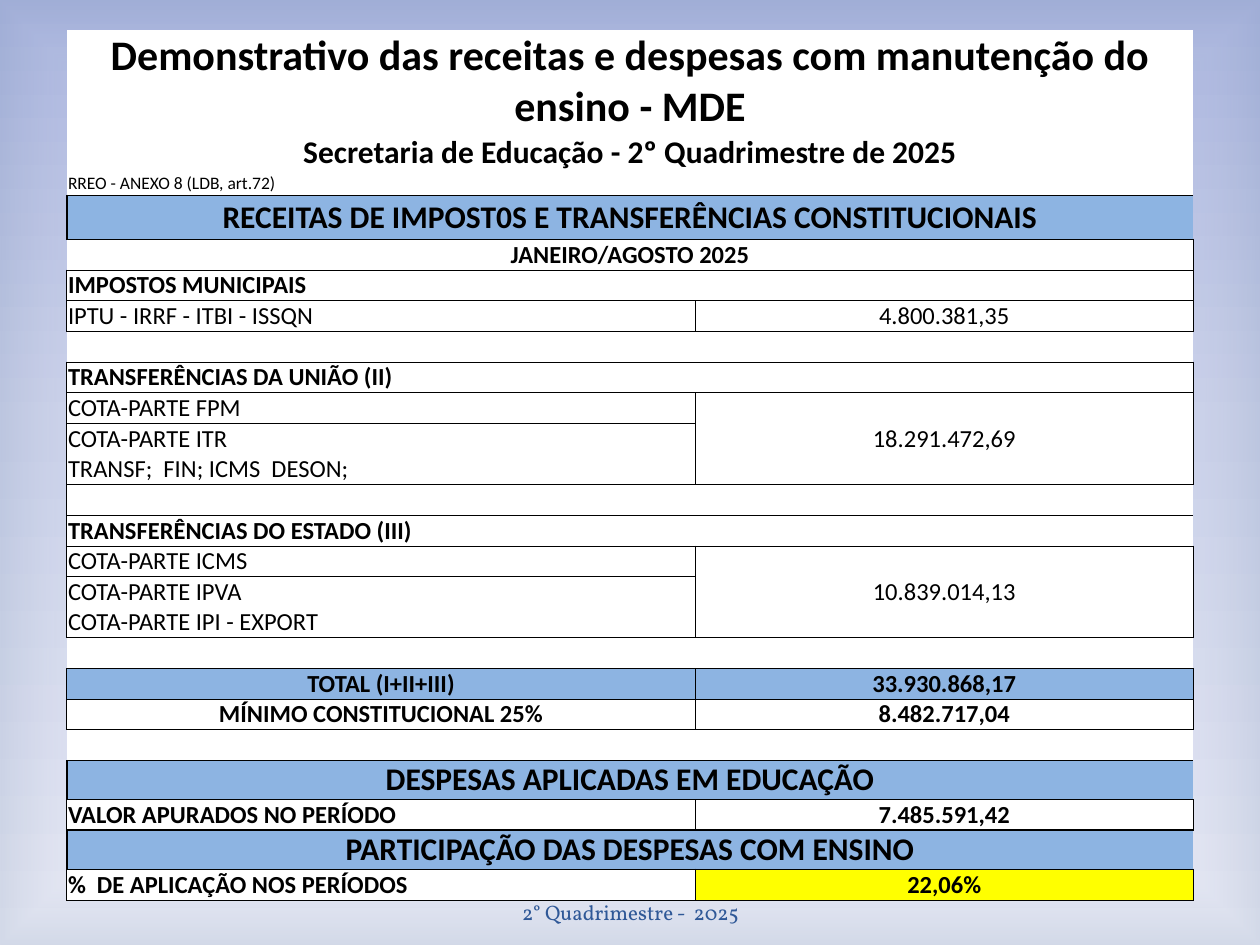
"""Build the slide on education revenue and spending."""
from lxml.etree import SubElement
from pptx import Presentation
from pptx.dml.color import RGBColor
from pptx.enum.shapes import MSO_SHAPE
from pptx.enum.text import MSO_ANCHOR, PP_ALIGN
from pptx.oxml.ns import qn
from pptx.util import Inches, Pt

HUES = {
    "black": "000000", "white": "FFFFFF", "blue": "8DB4E2", "gold": "FFFF00",
    "foot": "2F5897", "top": "A2AEDC", "mid": "C6CDE8", "low": "E3E6F3",
    "edge": "9BADC4",
}
LEFT, MID = PP_ALIGN.LEFT, PP_ALIGN.CENTER
STEP = 0.73 / 3


def shade(root, stops):
    """Give the first gradient under root new stops and return it."""
    grad = next(root.iter(qn("a:gradFill")))
    for part in list(grad):
        grad.remove(part)
    group = SubElement(grad, qn("a:gsLst"))
    for place, hue, alpha in stops:
        stop = SubElement(group, qn("a:gs"), pos=str(place * 1000))
        tint = SubElement(stop, qn("a:srgbClr"), val=HUES[hue])
        SubElement(tint, qn("a:alpha"), val=str(alpha * 1000))
    return grad


def write(frame, text, size, bold, align, face, hue):
    """Put one formatted paragraph into a text frame."""
    frame.text = text
    line = frame.paragraphs[0]
    line.alignment = align
    for run in line.runs:
        run.font.size, run.font.bold, run.font.name = Pt(size), bold, face
        run.font.color.rgb = RGBColor.from_string(HUES[hue])
    SubElement(line._p, qn("a:endParaRPr"), sz=str(size * 100))


deck = Presentation()
deck.slide_width, deck.slide_height = Inches(10), Inches(7.5)
slide = deck.slides.add_slide(deck.slide_layouts[6])

slide.background.fill.gradient()
grad = shade(slide._element, [(0, "top", 100), (45, "mid", 100), (100, "low", 100)])
SubElement(grad, qn("a:lin"), ang="5400000", scaled="0")

veil = slide.shapes.add_shape(MSO_SHAPE.RECTANGLE, 0, 0, Inches(10), Inches(7.5))
veil.shadow.inherit = False
veil.line.fill.background()
veil.fill.gradient()
grad = shade(veil._element, [(83, "white", 11), (100, "edge", 23)])
focus = SubElement(grad, qn("a:path"), path="rect")
SubElement(focus, qn("a:fillToRect"), l="50000", t="50000", r="50000", b="50000")

foot = slide.shapes.add_textbox(Inches(3.42), Inches(7.04), Inches(3.17), Inches(0.4))
foot.text_frame.word_wrap = True
foot.text_frame.vertical_anchor = MSO_ANCHOR.MIDDLE
write(foot.text_frame, "2° Quadrimestre -  2025", 12, False, MID, "Vollkorn", "foot")

# Each row: height, size, bold, align, fill, sides (capital = thick), left, right
ROWS = [
    (0.82, 24, True, MID, "white", "",
     "Demonstrativo das receitas e despesas com manutenção do ensino - MDE", None),
    (0.31, 18, True, MID, "white", "",
     "Secretaria de Educação - 2º Quadrimestre de 2025", None),
    (0.18, 10, False, LEFT, "white", "B", "RREO - ANEXO 8 (LDB, art.72)", ""),
    (0.35, 18, True, MID, "blue", "LTB",
     "RECEITAS DE IMPOST0S E TRANSFERÊNCIAS CONSTITUCIONAIS", None),
    (STEP, 14, True, MID, "white", "Trb", "JANEIRO/AGOSTO 2025", None),
    (STEP, 14, True, LEFT, "white", "ltrb", "IMPOSTOS MUNICIPAIS", None),
    (STEP, 14, False, LEFT, "white", "ltrb", "IPTU - IRRF - ITBI - ISSQN", "4.800.381,35"),
    (STEP, 14, False, LEFT, "white", "tb", "", None),
    (STEP, 14, True, LEFT, "white", "ltrb", "TRANSFERÊNCIAS DA UNIÃO (II)", None),
    (STEP, 14, False, LEFT, "white", "ltr", "COTA-PARTE FPM", "18.291.472,69"),
    (STEP, 14, False, LEFT, "white", "lr", "COTA-PARTE ITR", ""),
    (STEP, 14, False, LEFT, "white", "lrb", "TRANSF;  FIN; ICMS  DESON;", ""),
    (STEP, 14, False, LEFT, "white", "ltb", "", None),
    (STEP, 14, True, LEFT, "white", "ltb", "TRANSFERÊNCIAS DO ESTADO (III)", None),
    (STEP, 14, False, LEFT, "white", "ltr", "COTA-PARTE ICMS", "10.839.014,13"),
    (STEP, 14, False, LEFT, "white", "lr", "COTA-PARTE IPVA", ""),
    (STEP, 14, False, LEFT, "white", "lrb", "COTA-PARTE IPI - EXPORT", ""),
    (STEP, 14, False, LEFT, "white", "tb", "", ""),
    (STEP, 14, True, MID, "blue", "ltrb", "TOTAL (I+II+III)", "33.930.868,17"),
    (STEP, 14, True, MID, "white", "ltrb", "MÍNIMO CONSTITUCIONAL 25%", "8.482.717,04"),
    (STEP, 14, False, LEFT, "white", "tB", "", ""),
    (0.31, 18, True, MID, "blue", "LTb", "DESPESAS APLICADAS EM EDUCAÇÃO", None),
    (STEP, 14, True, LEFT, "white", "ltrB", "VALOR APURADOS NO PERÍODO", "7.485.591,42"),
    (0.31, 18, True, MID, "blue", "LTB", "PARTICIPAÇÃO DAS DESPESAS COM ENSINO", None),
    (STEP, 14, True, LEFT, "white", "lTrb", "%  DE APLICAÇÃO NOS PERÍODOS", "22,06%"),
]

frame = slide.shapes.add_table(len(ROWS), 2, Inches(0.53), Inches(0.24),
                               Inches(8.94), Inches(6.82))
table = frame.table
table.first_row = table.horz_banding = False
style = next(table._tbl.iter(qn("a:tableStyleId")))
style.text = "{2D5ABB26-0587-4C30-8999-92F81FD0307C}"
table.columns[0].width, table.columns[1].width = Inches(4.99), Inches(3.95)

for top in (9, 14):
    table.cell(top, 1).merge(table.cell(top + 2, 1))

for row, (high, size, bold, align, fill, sides, left, right) in enumerate(ROWS):
    table.rows[row].height = Inches(high)
    if right is None:
        table.cell(row, 0).merge(table.cell(row, 1))
    for col, text in enumerate((left, right or "")):
        cell = table.cell(row, col)
        cell.margin_left = cell.margin_right = Inches(0.01)
        cell.margin_top = cell.margin_bottom = 0
        cell.vertical_anchor = MSO_ANCHOR.MIDDLE
        write(cell.text_frame, text, size, bold, MID if col else align, "Calibri", "black")
        props = cell._tc.get_or_add_tcPr()
        for side in "lrtb":
            if side in sides.lower():
                wide = Pt(0.5 if side in sides else 1)
                edge = SubElement(props, qn(f"a:ln{side.upper()}"), w=str(wide))
                ink = SubElement(edge, qn("a:solidFill"))
                SubElement(ink, qn("a:srgbClr"), val=HUES["black"])
        cell.fill.solid()
        tone = "gold" if text == "22,06%" else fill
        cell.fill.fore_color.rgb = RGBColor.from_string(HUES[tone])

deck.save("out.pptx")
